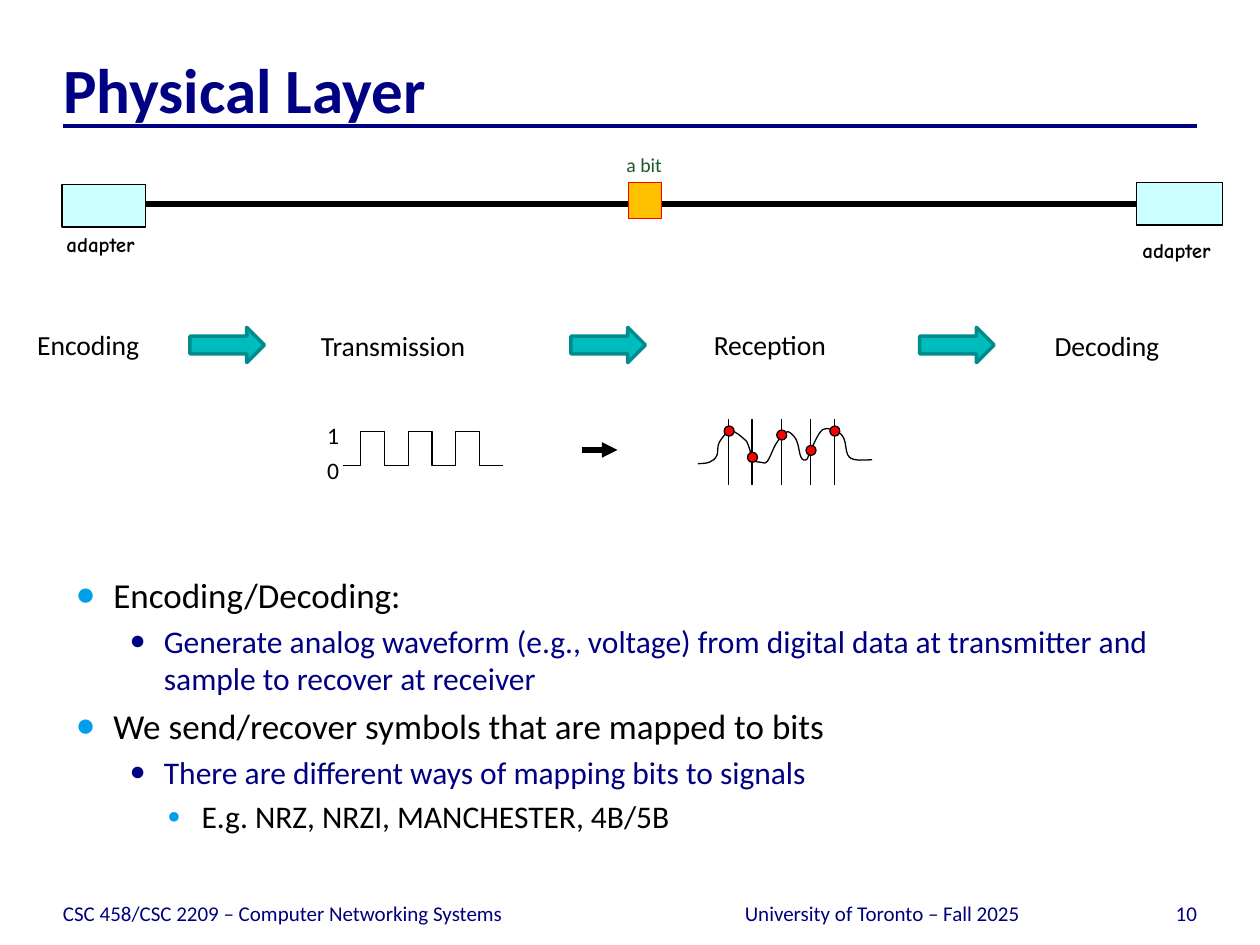
from lxml.etree import SubElement
from pptx import Presentation
from pptx.dml.color import RGBColor
from pptx.enum.shapes import MSO_CONNECTOR, MSO_SHAPE
from pptx.enum.text import MSO_ANCHOR, MSO_AUTO_SIZE, PP_ALIGN
from pptx.oxml.ns import qn
from pptx.util import Cm, Pt

NAVY, BLACK, SKY, RED = "000082", "000000", "009FEC", "FF0000"
FOOTER_COLOUR = "00007C"
color = RGBColor.from_string

prs = Presentation()
prs.slide_width, prs.slide_height = Cm(25.4), Cm(19.05)
slide = prs.slides.add_slide(prs.slide_layouts[1])
shapes = slide.shapes


def outline(shape, line, width, fill=None):
    """Set line and fill, and switch the theme shadow off."""
    shape.line.color.rgb = color(line)
    shape.line.width = Pt(width)
    if fill:
        shape.fill.solid()
        shape.fill.fore_color.rgb = color(fill)
    SubElement(shape.element.spPr, qn("a:effectLst"))


def add_label(text, left, top, width, height, size, ink=BLACK, font="Calibri",
              align=PP_ALIGN.LEFT, anchor=MSO_ANCHOR.TOP, inset=(0.25, 0.13),
              bold=False, wrap=True):
    """Add a one-line text; inset is (left and right, top and bottom) in cm."""
    label = shapes.add_textbox(Cm(left), Cm(top), Cm(width), Cm(height))
    frame = label.text_frame
    frame.word_wrap = wrap
    frame.vertical_anchor = anchor
    frame.margin_left = frame.margin_right = Cm(inset[0])
    frame.margin_top = frame.margin_bottom = Cm(inset[1])
    frame.paragraphs[0].alignment = align
    run = frame.paragraphs[0].add_run()
    run.text = text
    run.font.size, run.font.name, run.font.bold = Pt(size), font, bold
    run.font.color.rgb = color(ink)


# Title and rule
title = shapes.title
title.left, title.top, title.width, title.height = Cm(1.27), Cm(0.84), Cm(22.86), Cm(1.7)
heading = title.text_frame
heading.auto_size = MSO_AUTO_SIZE.NONE
heading.vertical_anchor = MSO_ANCHOR.BOTTOM
heading.margin_left = heading.margin_right = heading.margin_bottom = 0
heading.paragraphs[0].alignment = PP_ALIGN.LEFT
run = heading.paragraphs[0].add_run()
run.text = "Physical Layer"
run.font.size, run.font.name, run.font.bold = Pt(36), "Calibri", True
run.font.color.rgb = color(NAVY)

title_rule = shapes.add_connector(MSO_CONNECTOR.STRAIGHT, Cm(1.27), Cm(2.54), Cm(24.13), Cm(2.54))
outline(title_rule, NAVY, 2.25)

# Bulleted list: left margin, indent, bullet colour, bullet size, text size, text colour
levels = [
    (0.76, -0.76, SKY, 95, 20, BLACK),
    (1.78, -0.69, NAVY, 85, 18, NAVY),
    (2.54, -0.69, SKY, 70, 18, BLACK),
]
points = [
    (0, "Encoding/Decoding:"),
    (1, "Generate analog waveform (e.g., voltage) from digital data at transmitter and "
        "sample to recover at receiver"),
    (0, "We send/recover symbols that are mapped to bits"),
    (1, "There are different ways of mapping bits to signals"),
    (2, "E.g. NRZ, NRZI, MANCHESTER, 4B/5B"),
]
body = slide.placeholders[1]
body.left, body.top, body.width, body.height = Cm(1.27), Cm(11.43), Cm(22.86), Cm(6.35)
body.text_frame.auto_size = MSO_AUTO_SIZE.NONE
for index, (level, point) in enumerate(points):
    margin, indent, bullet_colour, bullet_size, size, ink = levels[level]
    paragraph = body.text_frame.paragraphs[0] if index == 0 else body.text_frame.add_paragraph()
    paragraph.level = level
    properties = paragraph._p.get_or_add_pPr()
    properties.set("marL", str(Cm(margin)))
    properties.set("indent", str(Cm(indent)))
    SubElement(SubElement(properties, qn("a:buClr")), qn("a:srgbClr"), val=bullet_colour)
    SubElement(properties, qn("a:buSzPct"), val=str(bullet_size * 1000))
    SubElement(properties, qn("a:buChar"), char="●")
    run = paragraph.add_run()
    run.text = point
    run.font.size, run.font.name = Pt(size), "Calibri"
    run.font.color.rgb = color(ink)

# Digital signal: a square wave between 1 and 0
for digit, top in (("1", 8.36), ("0", 9.07)):
    add_label(digit, 6.32, top, 0.79, 0.84, 13.5, align=PP_ALIGN.CENTER, wrap=False)

high, low, pulse = 8.7, 9.38, 0.48
square_points = []
for cycle in range(3):
    rise = 7.27 + 2 * pulse * cycle
    fall = rise + pulse
    square_points += [(rise, low), (rise, high), (fall, high), (fall, low)]
square_points.append((10.14, low))
square = shapes.build_freeform(Cm(6.91), Cm(low))
square.add_line_segments([(Cm(x), Cm(y)) for x, y in square_points], close=False)
square_wave = square.convert_to_shape()
square_wave.fill.background()
outline(square_wave, BLACK, 0.75)

signal_arrow = shapes.add_connector(MSO_CONNECTOR.STRAIGHT, Cm(11.73), Cm(9.07), Cm(12.45), Cm(9.07))
outline(signal_arrow, BLACK, 3)
SubElement(signal_arrow.element.spPr.find(qn("a:ln")), qn("a:tailEnd"), type="triangle")

# Analog signal: a smooth curve through its knots, one cubic Bézier between neighbours
knots = [
    (14.07, 9.35), (14.3, 9.32), (14.45, 9.19), (14.5, 8.92), (14.73, 8.69), (15.01, 8.86),
    (15.09, 8.99), (15.19, 9.27), (15.34, 9.32), (15.47, 9.3), (15.65, 8.94), (15.85, 8.71),
    (16, 8.79), (16.08, 8.94), (16.15, 9.22), (16.26, 9.27), (16.36, 9.04), (16.59, 8.66),
    (16.89, 8.71), (17.02, 8.86), (17.09, 9.17), (17.25, 9.27), (17.58, 9.27),
]
padded = [knots[0], *knots, knots[-1]]
controls = []
for before, start, end, after in zip(padded, padded[1:], padded[2:], padded[3:]):
    controls += [
        [Cm(s + (e - b) / 6) for b, s, e in zip(before, start, end)],
        [Cm(e - (a - s) / 6) for s, e, a in zip(start, end, after)],
        [Cm(e) for e in end],
    ]
analog = shapes.build_freeform(Cm(knots[0][0]), Cm(knots[0][1]))
analog.add_line_segments(controls, close=False)
analog_wave = analog.convert_to_shape()
segments = list(analog_wave.element.iter(qn("a:lnTo")))
for first in range(0, len(segments), 3):
    bezier = SubElement(segments[first].getparent(), qn("a:cubicBezTo"))
    for segment in segments[first:first + 3]:
        bezier.append(segment[0])
        segment.getparent().remove(segment)
analog_wave.fill.background()
outline(analog_wave, BLACK, 0.75)

# Sampling times and sampled values
samples = [(14.69, 8.69), (15.16, 9.22), (15.75, 8.77), (16.34, 9.08), (16.82, 8.69)]
for x, _ in samples:
    sample_time = shapes.add_connector(MSO_CONNECTOR.STRAIGHT, Cm(x), Cm(8.45), Cm(x), Cm(9.77))
    outline(sample_time, BLACK, 0.75)
for x, y in samples:
    sample = shapes.add_shape(MSO_SHAPE.OVAL, Cm(x - 0.09), Cm(y - 0.1), Cm(0.2), Cm(0.2))
    outline(sample, BLACK, 0.75, RED)

# Two adapters joined by a wire that carries one bit
wire = shapes.add_connector(MSO_CONNECTOR.STRAIGHT, Cm(2.92), Cm(4.11), Cm(22.91), Cm(4.11))
outline(wire, BLACK, 3)
adapters = [
    (1.25, 3.72, 1.68, 1.09, 4.54),
    (22.91, 3.68, 1.73, 22.78, 4.65),
]
for left, top, width, label_left, label_top in adapters:
    adapter = shapes.add_shape(MSO_SHAPE.RECTANGLE, Cm(left), Cm(top), Cm(width), Cm(0.86))
    outline(adapter, BLACK, 0.75, "CCFFFF")
    add_label("adapter", label_left, label_top, 1.98, 0.76, 12, font="Comic Neue", bold=True)
wire.end_connect(adapter, 1)

bit = shapes.add_shape(MSO_SHAPE.RECTANGLE, Cm(12.67), Cm(3.68), Cm(0.66), Cm(0.73))
outline(bit, RED, 0.75, "FFC000")
add_label("a bit", 9.9, 2.96, 6.17, 0.74, 11.25, "1B582B", align=PP_ALIGN.CENTER)

# Stages and the arrows between them
stages = [
    ("Encoding", 0, 6.48, 3.68, 0.75),
    ("Transmission", 5.72, 6.5, 4.85, 0.75),
    ("Reception", 13.64, 6.48, 3.94, 0.75),
    ("Decoding", 21.01, 6.5, 3.81, 0.25),
]
for stage, left, top, width, inset in stages:
    add_label(stage, left, top, width, 0.94, 15.75, inset=(inset, 0.13))
for left in (3.83, 11.51, 18.54):
    stage_arrow = shapes.add_shape(MSO_SHAPE.RIGHT_ARROW, Cm(left), Cm(6.6), Cm(1.5), Cm(0.71))
    outline(stage_arrow, "008C8C", 2, "00BDBD")

# Footer
footers = [
    ("CSC 458/CSC 2209 – Computer Networking Systems", 1.27, 12.27, PP_ALIGN.LEFT),
    ("University of Toronto – Fall 2025", 13.76, 8.05, PP_ALIGN.CENTER),
    ("10", 22.02, 2.11, PP_ALIGN.RIGHT),
]
for footer, left, width, align in footers:
    add_label(footer, left, 17.65, width, 1.02, 12, FOOTER_COLOUR, align=align,
              anchor=MSO_ANCHOR.BOTTOM, inset=(0, 0))

prs.save("out.pptx")
